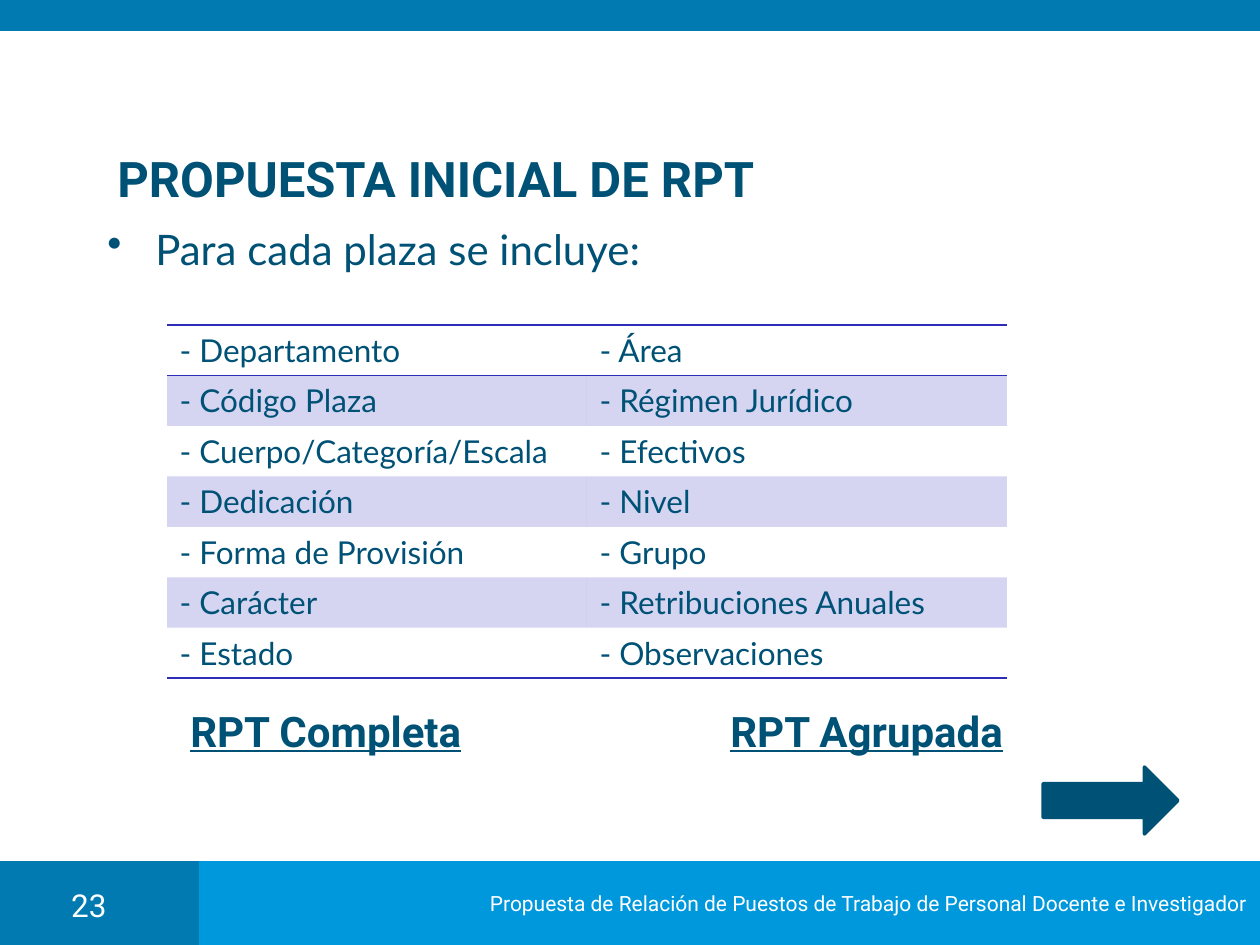
from lxml.etree import SubElement
from pptx import Presentation
from pptx.dml.color import RGBColor
from pptx.enum.shapes import MSO_SHAPE
from pptx.enum.text import MSO_ANCHOR, PP_ALIGN
from pptx.oxml.ns import qn
from pptx.util import Emu, Pt

EMU_PER_PX = 914400 / 126
WIDTH, HEIGHT = 1260, 945
HEADING_FONT, BODY_FONT = "Roboto", "Lato"
NAVY, BLUE, SKY, WHITE, INDIGO = "005176", "007AB1", "0098DC", "FFFFFF", "2D2DB9"
NO_STYLE_TABLE = "{2D5ABB26-0587-4C30-8999-92F81FD0307C}"

TITLE = "PROPUESTA INICIAL DE RPT"
INTRO = "Para cada plaza se incluye:"
FOOTER = "Propuesta de Relación de Puestos de Trabajo de Personal Docente e Investigador"
PAGE_NUMBER = "23"
FIELDS = [
    ("Departamento", "Área"),
    ("Código Plaza", "Régimen Jurídico"),
    ("Cuerpo/Categoría/Escala", "Efectivos"),
    ("Dedicación", "Nivel"),
    ("Forma de Provisión", "Grupo"),
    ("Carácter", "Retribuciones Anuales"),
    ("Estado", "Observaciones"),
]
VERSIONS = [("RPT Completa", (178, 699, 312, 63)), ("RPT Agrupada", (718, 699, 318, 63))]


def px(value):
    return Emu(round(value * EMU_PER_PX))


def color(hex_value):
    return RGBColor.from_string(hex_value)


def write(frame, text, size, font=HEADING_FONT, fill=NAVY, bold=False,
          underline=False, align=PP_ALIGN.LEFT):
    frame.text = text
    paragraph = frame.paragraphs[0]
    paragraph.alignment = align
    style = paragraph.runs[0].font
    style.size, style.name = Pt(size), font
    style.bold, style.underline = bold, underline
    style.color.rgb = color(fill)
    return paragraph


def add_block(page, preset, place, fill):
    block = page.shapes.add_shape(preset, *map(px, place))
    block.shadow.inherit = False
    block.fill.solid()
    block.fill.fore_color.rgb = color(fill)
    block.line.fill.background()
    return block


def add_text(page, place, text, size, wrap=True, anchor=MSO_ANCHOR.TOP, **style):
    box = page.shapes.add_textbox(*map(px, place))
    box.text_frame.word_wrap = wrap
    box.text_frame.vertical_anchor = anchor
    return write(box.text_frame, text, size, **style)


def add_bullet(paragraph, indent):
    properties = paragraph._p.get_or_add_pPr()
    properties.set("marL", str(px(indent)))
    properties.set("indent", str(-px(indent)))
    SubElement(properties, qn("a:buChar"), char="•")


def add_border(cell, side):
    line = SubElement(cell._tc.get_or_add_tcPr(), qn(f"a:ln{side}"), w=str(Pt(1)))
    SubElement(SubElement(line, qn("a:solidFill")), qn("a:srgbClr"), val=INDIGO)


def shade(cell, percent):
    """Fill a cell with see-through indigo."""
    cell.fill.solid()
    cell.fill.fore_color.rgb = color(INDIGO)
    tint = cell._tc.tcPr.find(f".//{qn('a:solidFill')}/{qn('a:srgbClr')}")
    SubElement(tint, qn("a:alpha"), val=str(percent * 1000))


def add_fields_table(page, place):
    table = page.shapes.add_table(len(FIELDS), len(FIELDS[0]), *map(px, place)).table
    table.first_row = table.horz_banding = False
    table._tbl.tblPr.find(qn("a:tableStyleId")).text = NO_STYLE_TABLE
    last = len(FIELDS) - 1
    for row, names in enumerate(FIELDS):
        for column, name in enumerate(names):
            cell = table.cell(row, column)
            write(cell.text_frame, f"- {name}", 18, font=BODY_FONT)
            if row == 0:
                add_border(cell, "T")
            if row in (0, last):
                add_border(cell, "B")
            if row % 2:
                shade(cell, 20)
            else:
                cell.fill.background()


def main():
    deck = Presentation()
    deck.slide_width, deck.slide_height = px(WIDTH), px(HEIGHT)
    page = deck.slides.add_slide(deck.slide_layouts[6])

    add_block(page, MSO_SHAPE.RECTANGLE, (0, 861, 230, 84), BLUE)
    footer = add_block(page, MSO_SHAPE.RECTANGLE, (199, 861, 1061, 84), SKY).text_frame
    footer.word_wrap = False
    footer.vertical_anchor = MSO_ANCHOR.MIDDLE
    write(footer, FOOTER, 12, fill=WHITE, align=PP_ALIGN.RIGHT)
    add_block(page, MSO_SHAPE.RECTANGLE, (0, 0, WIDTH, 31), BLUE)

    add_text(page, (105, 151, 1052, 53), TITLE, 28, bold=True, anchor=MSO_ANCHOR.MIDDLE)
    intro = add_text(page, (95, 217, 1071, 80), INTRO, 24, font=BODY_FONT)
    add_bullet(intro, 48)
    add_text(page, (44, 880, 90, 40), PAGE_NUMBER, 18, fill=WHITE, align=PP_ALIGN.CENTER)

    add_fields_table(page, (167, 325, 840, 353))
    for name, place in VERSIONS:
        add_text(page, place, name, 24, wrap=False, bold=True, underline=True)

    arrow = add_block(page, MSO_SHAPE.RIGHT_ARROW, (1043, 767, 135, 67), NAVY)
    arrow.line.color.rgb = color(NAVY)
    arrow.line.width = Pt(2)

    deck.save("out.pptx")


if __name__ == "__main__":
    main()
